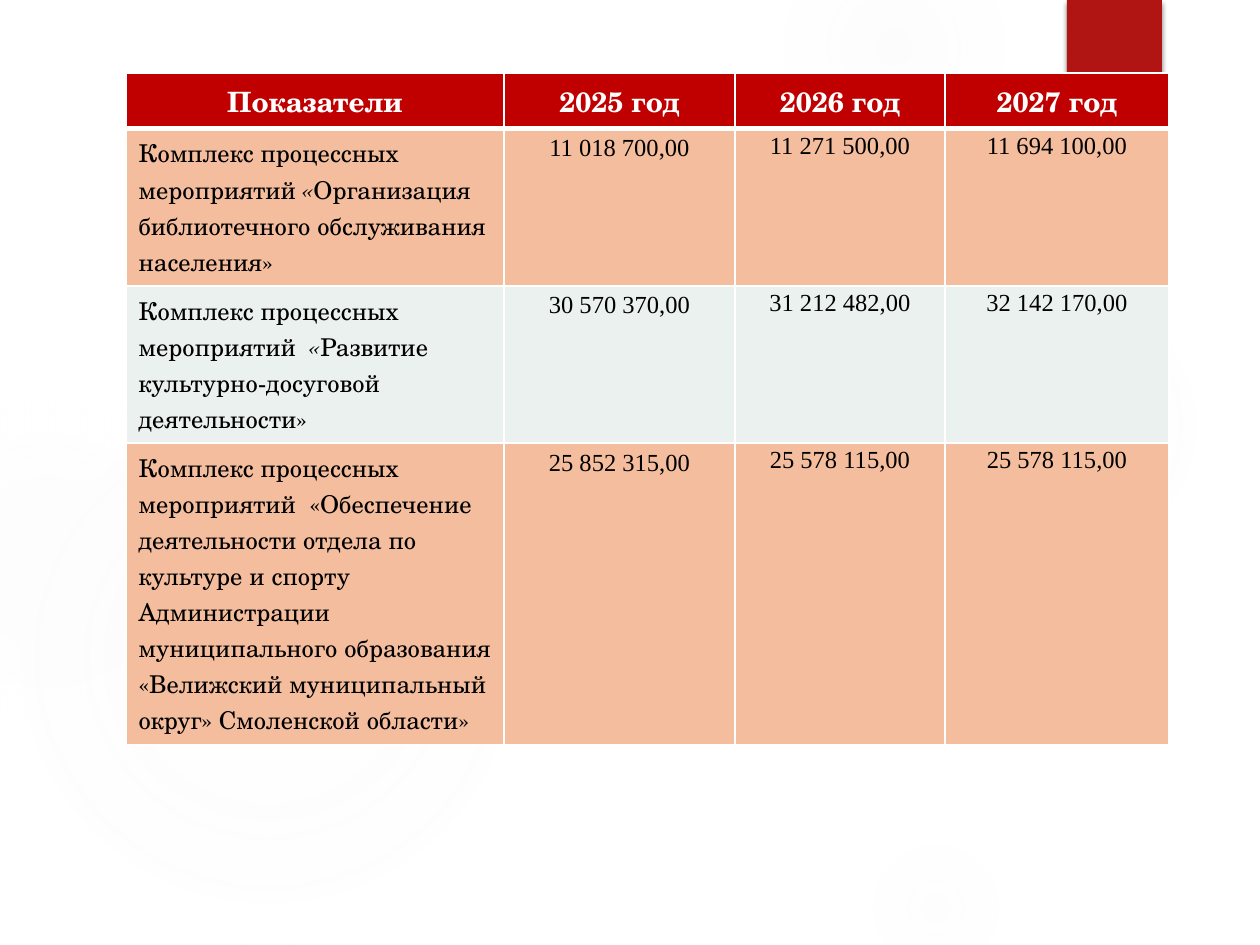
from dataclasses import dataclass

from lxml import etree
from pptx import Presentation
from pptx.dml.color import RGBColor
from pptx.enum.shapes import MSO_SHAPE as Shape
from pptx.enum.text import PP_ALIGN as Align
from pptx.oxml import parse_xml
from pptx.oxml.ns import nsdecls, qn
from pptx.util import Pt

EMU_PER_PX = 914400 / 126


@dataclass(frozen=True)
class Theme:
    white: str = "FFFFFF"
    text: str = "000000"
    header: str = "C00000"
    bands: tuple = ("F4BD9E", "EBF1EE")
    accent: str = "B01513"
    glow: str = "F3F3F3"
    label_font: str = "TeX Gyre Schola"
    number_font: str = "Times New Roman"
    header_size: int = 16
    body_size: int = 14


THEME = Theme()

# Circles: left, top, diameter, then the alpha at the centre and at 36 %, and the end stop
CIRCLES = [
    (868, 231, 388, 7, 6, 69),
    (784, -63, 220, 14, 7, 73),
    (868, 840, 136, 9, 5, 66),
    (-21, 368, 577, 11, 10, 75),
    (-116, 399, 325, 8, 8, 72),
]
COLUMN_WIDTHS = [378, 231, 210, 224]
ROW_HEIGHTS = [49, 125, 125, 125]
HEADINGS = ["Показатели", "2025 год", "2026 год", "2027 год"]
# Each label is a list of (text, italic) runs
ROWS = [
    ([("Комплекс процессных мероприятий", False), (" «", True),
      ("Организация библиотечного обслуживания населения»", False)],
     "11 018 700,00", "11 271 500,00", "11 694 100,00"),
    ([("Комплекс процессных мероприятий ", False), (" «", True),
      ("Развитие культурно-досуговой деятельности»", False)],
     "30 570 370,00", "31 212 482,00", "32 142 170,00"),
    ([("Комплекс процессных мероприятий  «Обеспечение деятельности отдела "
       "по культуре и спорту Администрации муниципального образования "
       "«Велижский муниципальный округ» Смоленской области»", False)],
     "25 852 315,00", "25 578 115,00", "25 578 115,00"),
]


def px(length):
    return round(length * EMU_PER_PX)


def write_text(frame, runs, *, font, size, color, bold=False, align=None, spacing=None):
    paragraph = frame.paragraphs[0]
    paragraph.alignment = align
    paragraph.line_spacing = spacing
    for text, italic in runs:
        run = paragraph.add_run()
        run.text = text
        run.font.name = font
        run.font.size = Pt(size)
        run.font.bold = bold
        run.font.italic = italic
        run.font.color.rgb = RGBColor.from_string(color)


def add_plain_shape(slide, kind, box, color):
    shape = slide.shapes.add_shape(kind, *map(px, box))
    shape.shadow.inherit = False
    shape.fill.solid()
    shape.fill.fore_color.rgb = RGBColor.from_string(color)
    shape.line.fill.background()
    return shape


def add_circle(slide, box, stops):
    """Place a circle that fades out from its centre."""
    shape = add_plain_shape(slide, Shape.OVAL, box, THEME.glow)
    stop_xml = "".join(
        f'<a:gs pos="{position * 1000}"><a:srgbClr val="{THEME.glow}">'
        f'<a:alpha val="{alpha * 1000}"/></a:srgbClr></a:gs>'
        for position, alpha in stops)
    gradient = parse_xml(
        f'<a:gradFill {nsdecls("a")}><a:gsLst>{stop_xml}</a:gsLst>'
        '<a:path path="circle"><a:fillToRect l="50000" t="50000" r="50000" b="50000"/>'
        '</a:path></a:gradFill>')
    properties = shape.element.spPr
    properties.replace(properties.find(qn("a:solidFill")), gradient)


def add_background(slide):
    for left, top, diameter, centre, middle, end in CIRCLES:
        add_circle(slide, (left, top, diameter, diameter),
                   [(0, centre), (36, middle), (end, 0)])


def add_corner_mark(slide, box):
    shape = add_plain_shape(slide, Shape.RECTANGLE, box, THEME.accent)
    effects = shape.element.spPr.find(qn("a:effectLst"))
    shadow = etree.SubElement(effects, qn("a:outerShdw"), blurRad=str(Pt(3)),
                              dist=str(Pt(2)), dir="5400000", rotWithShape="0")
    color = etree.SubElement(shadow, qn("a:srgbClr"), val="000000")
    etree.SubElement(color, qn("a:alpha"), val="45000")


def style_cell(cell, color, top=1, bottom=1):
    """Give a cell its white borders (widths in points) and its fill."""
    properties = cell._tc.get_or_add_tcPr()
    for side, width in (("L", 1), ("R", 1), ("T", top), ("B", bottom)):
        line = etree.SubElement(properties, qn(f"a:ln{side}"), w=str(Pt(width)))
        fill = etree.SubElement(line, qn("a:solidFill"))
        etree.SubElement(fill, qn("a:srgbClr"), val=THEME.white)
    cell.fill.solid()
    cell.fill.fore_color.rgb = RGBColor.from_string(color)


def add_budget_table(slide, box):
    graphic = slide.shapes.add_table(len(ROW_HEIGHTS), len(COLUMN_WIDTHS), *map(px, box))
    table = graphic.table
    for column, width in zip(table.columns, COLUMN_WIDTHS):
        column.width = px(width)
    for row, height in zip(table.rows, ROW_HEIGHTS):
        row.height = px(height)
    graphic.height = px(box[3])

    # Header row
    for index, heading in enumerate(HEADINGS):
        cell = table.cell(0, index)
        style_cell(cell, THEME.header, bottom=3)
        write_text(cell.text_frame, [(heading, False)], font=THEME.label_font,
                   size=THEME.header_size, color=THEME.white, bold=True, align=Align.CENTER)

    # Body rows: a label, then one amount a year
    for row, (label, *amounts) in enumerate(ROWS, start=1):
        for index in range(len(HEADINGS)):
            cell = table.cell(row, index)
            style_cell(cell, THEME.bands[(row - 1) % 2], top=3 if row == 1 else 1)
            if index == 0:
                write_text(cell.text_frame, label, font=THEME.label_font,
                           size=THEME.body_size, color=THEME.text)
                continue
            tight = index > 1
            if tight:
                cell.margin_left = cell.margin_right = 0
                cell.margin_top = cell.margin_bottom = 0
            write_text(cell.text_frame, [(amounts[index - 1], False)],
                       font=THEME.number_font, size=THEME.body_size, color=THEME.text,
                       align=Align.CENTER, spacing=1.15 if tight else None)


def main():
    presentation = Presentation()
    presentation.slide_width, presentation.slide_height = px(1260), px(945)
    slide = presentation.slides.add_slide(presentation.slide_layouts[6])
    add_background(slide)
    add_corner_mark(slide, (1067, 0, 95, 151))
    add_budget_table(slide, (126, 73, sum(COLUMN_WIDTHS), 557))
    presentation.save("out.pptx")


if __name__ == "__main__":
    main()
